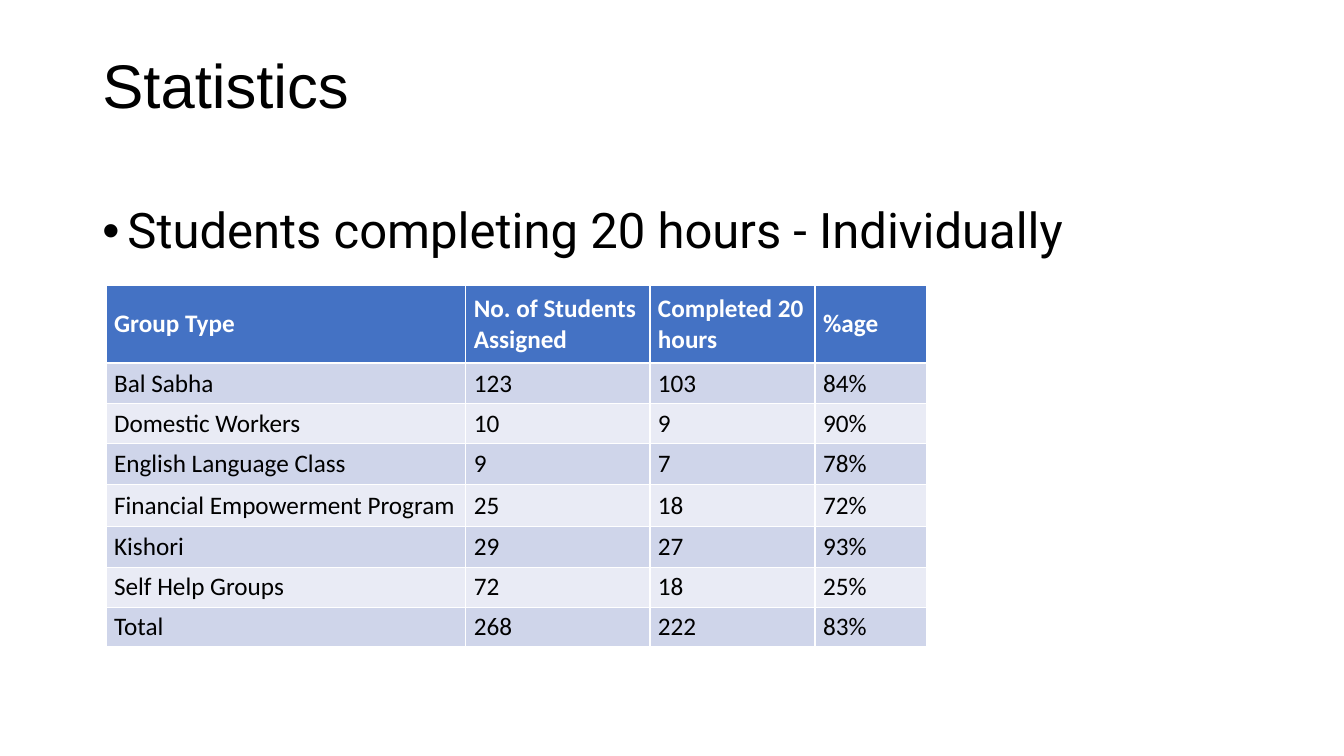
from lxml import etree
from pptx import Presentation
from pptx import util as u
from pptx.dml.color import RGBColor
from pptx.enum import text
from pptx.oxml import ns

COLORS = {
    "ink": "000000",
    "header": "4472C4",
    "header_text": "FFFFFF",
    "band_dark": "CFD5EA",
    "band_light": "E9EBF5",
}
COLUMN_WIDTHS = [257, 131.5, 118, 80]
ROW_HEIGHTS = [55.25, 29.25, 28.25, 29.25, 30.25, 29.25, 28.25, 28.25]
GROUPS = [
    ("Group Type", "No. of Students Assigned", "Completed 20 hours", "%age"),
    ("Bal Sabha", "123", "103", "84%"),
    ("Domestic Workers", "10", "9", "90%"),
    ("English Language Class", "9", "7", "78%"),
    ("Financial Empowerment Program", "25", "18", "72%"),
    ("Kishori", "29", "27", "93%"),
    ("Self Help Groups", "72", "18", "25%"),
    ("Total", "268", "222", "83%"),
]


def color(name):
    return RGBColor.from_string(COLORS[name])


def style(para, font, size, ink, bold=False):
    for span in para.runs:
        span.font.name = font
        span.font.size = u.Pt(size)
        span.font.bold = bold
        span.font.color.rgb = color(ink)


def place(shape, box):
    shape.left, shape.top, shape.width, shape.height = map(u.Pt, box)


def add_title(page, box):
    title = page.shapes.title
    place(title, box)
    frame = title.text_frame
    frame.text = "Statistics"
    frame.vertical_anchor = text.MSO_ANCHOR.MIDDLE
    para = frame.paragraphs[0]
    para.alignment = text.PP_ALIGN.LEFT
    para.line_spacing = 0.9
    style(para, "Arial", 44, "ink")


def add_bullet_line(page, box):
    frame = page.shapes.add_textbox(*map(u.Pt, box)).text_frame
    frame.word_wrap = True
    frame.text = "Students completing 20 hours - Individually"
    para = frame.paragraphs[0]
    # Hanging bullet
    props = para._p.get_or_add_pPr()
    props.set("marL", str(u.Pt(18)))
    props.set("indent", str(u.Pt(-18)))
    etree.SubElement(props, ns.qn("a:buFont")).set("typeface", "Arial")
    etree.SubElement(props, ns.qn("a:buChar")).set("char", "•")
    para.line_spacing = 0.9
    style(para, "Roboto", 35, "ink")


def add_group_table(page, left, top):
    box = (left, top, sum(COLUMN_WIDTHS), sum(ROW_HEIGHTS))
    table = page.shapes.add_table(
        len(GROUPS), len(COLUMN_WIDTHS), *map(u.Pt, box)).table
    for column, width in zip(table.columns, COLUMN_WIDTHS):
        column.width = u.Pt(width)
    for index, (row, height, values) in enumerate(
            zip(table.rows, ROW_HEIGHTS, GROUPS)):
        row.height = u.Pt(height)
        is_header = index == 0
        band = "band_dark" if index % 2 else "band_light"
        for cell, value in zip(row.cells, values):
            cell.fill.solid()
            cell.fill.fore_color.rgb = color("header" if is_header else band)
            cell.margin_left = cell.margin_right = 0
            cell.margin_top = cell.margin_bottom = 0
            cell.vertical_anchor = text.MSO_ANCHOR.MIDDLE
            cell.text_frame.text = value
            para = cell.text_frame.paragraphs[0]
            para._p.get_or_add_pPr().set("marL", str(u.Pt(5.75)))
            style(para, "Calibri", 18,
                  "header_text" if is_header else "ink", is_header)


def add_statistics_page(deck):
    page = deck.slides.add_slide(deck.slide_layouts[5])
    margin = 66
    add_title(page, (margin, 22.5, 687.5, 81))
    add_bullet_line(page, (margin, 144, 828, 342.5))
    add_group_table(page, margin + 9.75, 204)


def main():
    deck = Presentation()
    deck.slide_width = u.Pt(960)
    deck.slide_height = u.Pt(540)
    add_statistics_page(deck)
    deck.save("out.pptx")


if __name__ == "__main__":
    main()
